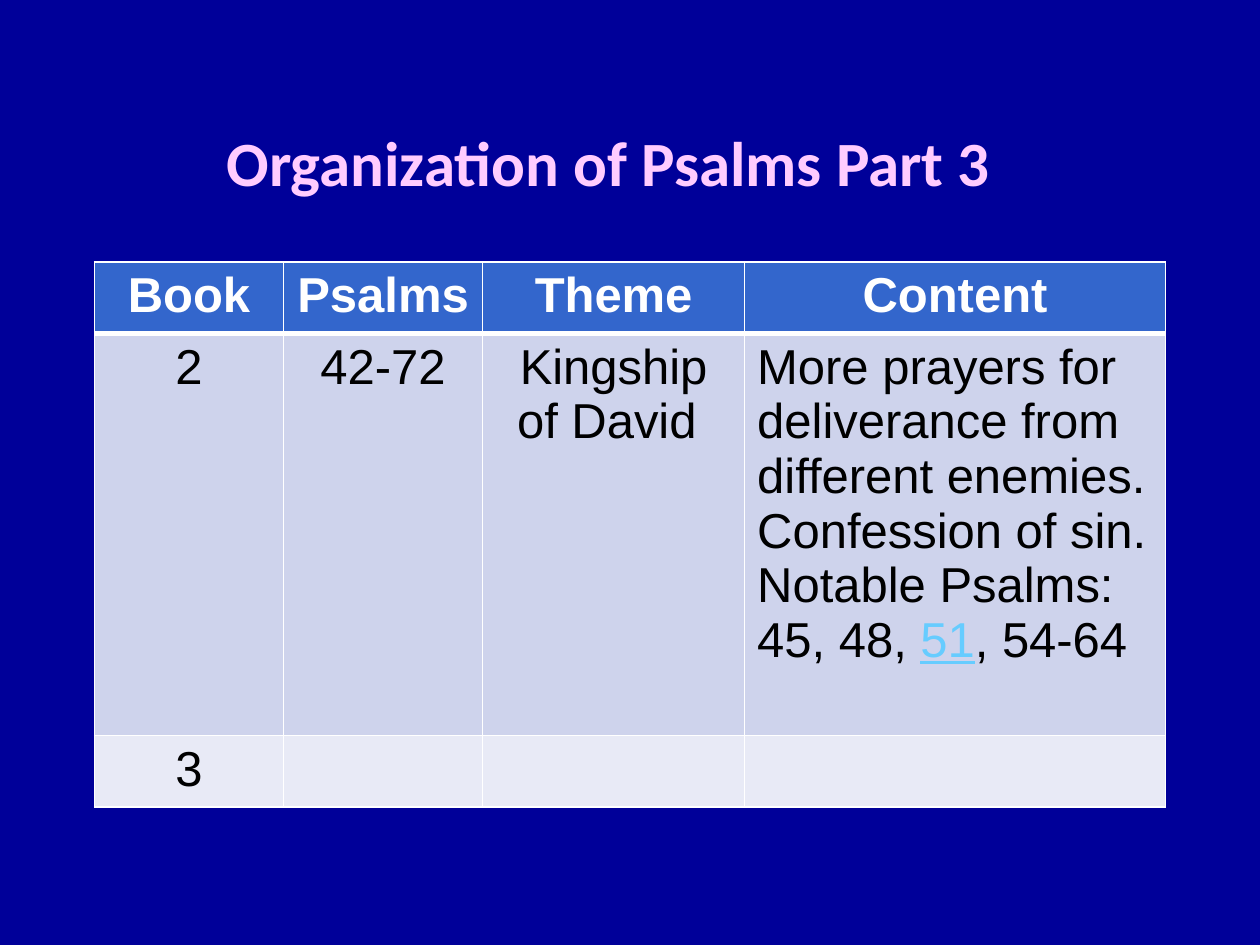
"""Build the slide on the organization of Psalms, part 3."""
from dataclasses import dataclass

from lxml.etree import SubElement
from pptx import Presentation
from pptx.dml.color import RGBColor
from pptx.enum.text import MSO_ANCHOR, PP_ALIGN
from pptx.oxml.ns import qn
from pptx.util import Inches, Pt


@dataclass(frozen=True)
class Theme:
    background: str = "000099"
    title: str = "FFCCFF"
    header: str = "3366CC"
    bands: tuple = ("CED3EC", "E8EAF6")
    light: str = "FFFFFF"
    dark: str = "000000"
    accent: str = "66CCFF"
    title_font: str = "Calibri"
    body_font: str = "Arial"
    title_size: int = 36
    body_size: int = 28


theme = Theme()


def style_font(font, name, size, color, bold):
    font.name = name
    font.size = Pt(size)
    font.bold = bold
    font.color.rgb = RGBColor.from_string(color)


def add_border(cell, side, width):
    line = SubElement(cell._tc.get_or_add_tcPr(), qn(f"a:ln{side}"), w=str(Pt(width)))
    fill = SubElement(line, qn("a:solidFill"))
    SubElement(fill, qn("a:srgbClr"), val=theme.light)


deck = Presentation()
deck.slide_width, deck.slide_height = Inches(10), Inches(7.5)
page = deck.slides.add_slide(deck.slide_layouts[6])
page.background.fill.solid()
page.background.fill.fore_color.rgb = RGBColor.from_string(theme.background)

title_box = page.shapes.add_textbox(Inches(0.58), Inches(0.67), Inches(8.5), Inches(1.22))
title_frame = title_box.text_frame
title_frame.word_wrap = True
title_frame.vertical_anchor = MSO_ANCHOR.MIDDLE
title_frame.text = "Organization of Psalms Part 3"
title_para = title_frame.paragraphs[0]
title_para.alignment = PP_ALIGN.CENTER
style_font(title_para.runs[0].font, theme.title_font, theme.title_size, theme.title, True)

rows = [
    [["Book"], ["Psalms"], ["Theme"], ["Content"]],
    [["2"], ["42-72"], ["Kingship of David "],
     ["More prayers for deliverance from different enemies. Confession of sin. "
      "Notable Psalms: 45, 48, ", "51", ", 54-64"]],
    [["3"], [], [], []],
]
column_widths = [1.5, 1.58, 2.08, 3.34]
row_heights = [0.52, 3.19, 0.57]

table = page.shapes.add_table(
    len(rows), len(column_widths), Inches(0.75), Inches(2.08),
    Inches(sum(column_widths)), Inches(sum(row_heights))).table
for column, width in zip(table.columns, column_widths):
    column.width = Inches(width)
for row, height in zip(table.rows, row_heights):
    row.height = Inches(height)

for row_index, row in enumerate(rows):
    is_header = row_index == 0
    row_fill = theme.header if is_header else theme.bands[row_index - 1]
    text_color = theme.light if is_header else theme.dark
    for column_index, pieces in enumerate(row):
        cell = table.cell(row_index, column_index)
        for side in "LRTB":
            under_header = (row_index, side) in ((0, "B"), (1, "T"))
            add_border(cell, side, 3 if under_header else 1)
        cell.fill.solid()
        cell.fill.fore_color.rgb = RGBColor.from_string(row_fill)
        para = cell.text_frame.paragraphs[0]
        is_content = len(pieces) > 1
        para.alignment = PP_ALIGN.LEFT if is_content else PP_ALIGN.CENTER
        for piece in pieces:
            span = para.add_run()
            span.text = piece
            is_linked = piece == "51"
            style_font(span.font, theme.body_font, theme.body_size,
                       theme.accent if is_linked else text_color, is_header)
            span.font.underline = is_linked

deck.save("out.pptx")
